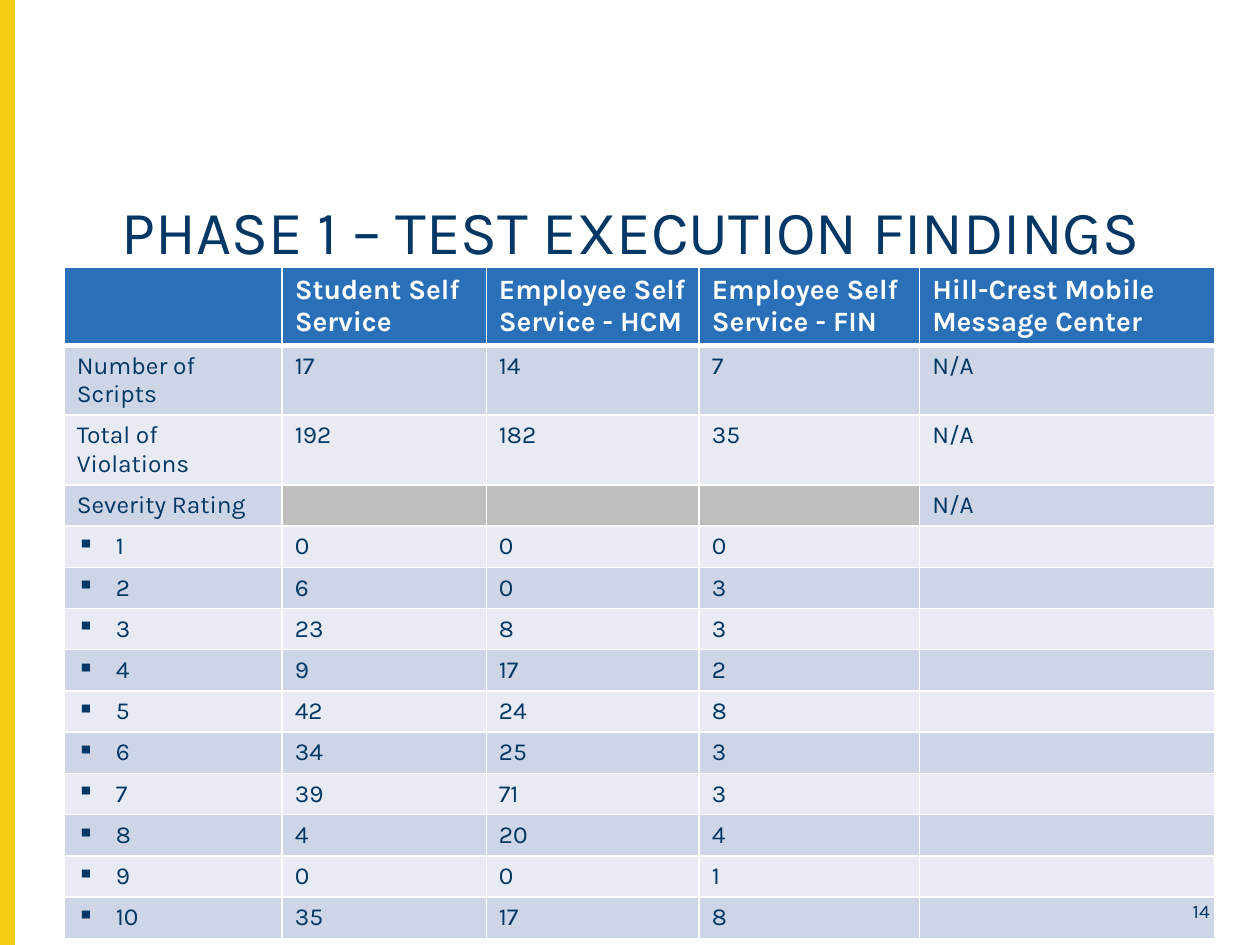
import pptx
import pptx.dml.color
import pptx.enum.shapes
import pptx.enum.text
import pptx.oxml
import pptx.oxml.ns
import pptx.util
from dataclasses import dataclass

Inches = pptx.util.Inches
Pt = pptx.util.Pt
Align = pptx.enum.text.PP_ALIGN


@dataclass(frozen=True)
class Theme:
    font: str = "Karla"
    navy: str = "003764"
    white: str = "FFFFFF"
    yellow: str = "F4CE12"
    header: str = "2A70B8"
    bands: tuple = ("CDD5E6", "E8EBF3")
    blocked: str = "BFBFBF"
    title_size: int = 35
    header_size: int = 16
    body_size: int = 14
    number_size: int = 11


THEME = Theme()
COLUMN_WIDTHS = (1.73, 1.62, 1.69, 1.75, 2.34)
HEADINGS = ("", "Student Self Service", "Employee Self Service - HCM",
            "Employee Self Service - FIN", "Hill-Crest Mobile\nMessage Center")
SUMMARY = (
    ("Number of Scripts", "17", "14", "7", "N/A"),
    ("Total of Violations", "192", "182", "35", "N/A"),
    ("Severity Rating", None, None, None, "N/A"),
)
SEVERITY_COUNTS = ((0, 0, 0), (6, 0, 3), (23, 8, 3), (9, 17, 2), (42, 24, 8),
                   (34, 25, 3), (39, 71, 3), (4, 20, 4), (0, 0, 1), (35, 17, 8))


def color(value):
    return pptx.dml.color.RGBColor.from_string(value)


def style(para, size, ink, bold=False, align=Align.LEFT):
    para.alignment = align
    para.font.name = THEME.font
    para.font.size = Pt(size)
    para.font.color.rgb = color(ink)
    para.font.bold = bold


def add_side_bar(page):
    bar = page.shapes.add_shape(pptx.enum.shapes.MSO_SHAPE.RECTANGLE,
                                0, 0, Inches(0.11), Inches(7.5))
    bar.shadow.inherit = False
    bar.fill.solid()
    bar.fill.fore_color.rgb = color(THEME.yellow)
    bar.line.color.rgb = color(THEME.yellow)
    bar.line.width = Pt(1)


def add_title(page, text):
    box = page.shapes.title
    box.left, box.top, box.width, box.height = map(Inches, (0.45, 1.55, 9.12, 0.87))
    frame = box.text_frame
    frame.text = text
    frame.vertical_anchor = pptx.enum.text.MSO_ANCHOR.TOP
    para = frame.paragraphs[0]
    para.line_spacing = 0.9
    style(para, THEME.title_size, THEME.navy, align=Align.CENTER)


def add_page_number(page, number):
    box = page.shapes.add_textbox(*map(Inches, (9.19, 7.09, 0.51, 0.26)))
    box.text_frame.word_wrap = True
    box.text_frame.text = str(number)
    style(box.text_frame.paragraphs[0], THEME.number_size, THEME.navy, align=Align.RIGHT)


def set_borders(cell, bottom):
    properties = cell._tc.get_or_add_tcPr()
    widths = (("lnL", 1), ("lnR", 1), ("lnT", 1), ("lnB", bottom))
    for position, (side, width) in enumerate(widths):
        properties.insert(position, pptx.oxml.parse_xml(
            f'<a:{side} {pptx.oxml.ns.nsdecls("a")} w="{Pt(width)}"><a:solidFill>'
            f'<a:srgbClr val="{THEME.white}"/></a:solidFill></a:{side}>'))


def add_bullet(para):
    properties = para._p.get_or_add_pPr()
    properties.set("marL", str(Inches(0.31)))
    properties.set("indent", str(-Inches(0.31)))
    properties.insert(0, pptx.oxml.parse_xml(
        f'<a:buChar {pptx.oxml.ns.nsdecls("a")} char="▪"/>'))


def fill_cell(cell, text, fill, size, ink, bold=False, bottom=1):
    cell.fill.solid()
    cell.fill.fore_color.rgb = color(fill)
    set_borders(cell, bottom)
    cell.text_frame.text = text
    for para in cell.text_frame.paragraphs:
        style(para, size, ink, bold)


def add_findings_table(page):
    severity = [(str(rating), *map(str, counts), "")
                for rating, counts in enumerate(SEVERITY_COUNTS, 1)]
    rows = [*SUMMARY, *severity]
    frame = page.shapes.add_table(len(rows) + 1, len(COLUMN_WIDTHS),
                                  *map(Inches, (0.51, 2.12, 9.12, 4.37)))
    table = frame.table
    for column, width in zip(table.columns, COLUMN_WIDTHS):
        column.width = Inches(width)
    for row in table.rows:
        row.height = Inches(0.3)
    table.rows[0].height = Inches(0.47)

    for column, heading in enumerate(HEADINGS):
        fill_cell(table.cell(0, column), heading, THEME.header,
                  THEME.header_size, THEME.white, bold=True, bottom=3)
    for index, values in enumerate(rows):
        for column, value in enumerate(values):
            fill = THEME.blocked if value is None else THEME.bands[index % 2]
            fill_cell(table.cell(index + 1, column), value or "", fill,
                      THEME.body_size, THEME.navy)
        if index >= len(SUMMARY):
            add_bullet(table.cell(index + 1, 0).text_frame.paragraphs[0])


def main():
    deck = pptx.Presentation()
    deck.slide_width, deck.slide_height = Inches(10), Inches(7.5)
    page = deck.slides.add_slide(deck.slide_layouts[5])
    add_side_bar(page)
    add_title(page, "PHASE 1 – TEST EXECUTION FINDINGS")
    add_findings_table(page)
    add_page_number(page, 14)
    deck.save("out.pptx")


if __name__ == "__main__":
    main()
